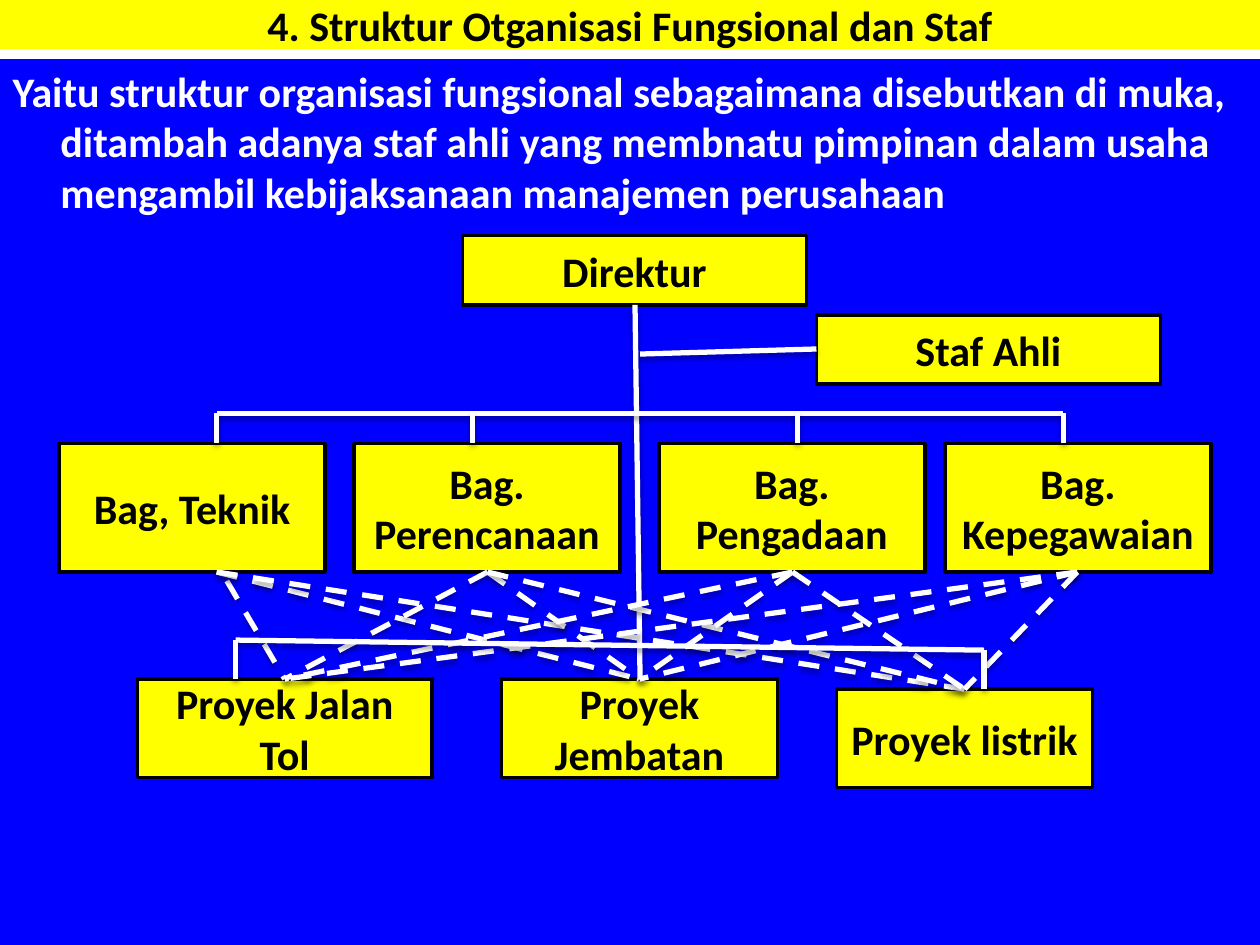
"""Build the slide on functional-and-staff organisation structure."""
import itertools

import pptx
import pptx.chart.data
import pptx.dml.color
import pptx.enum.dml
import pptx.enum.shapes
import pptx.enum.text
import pptx.oxml
import pptx.util

Inches, Pt = pptx.util.Inches, pptx.util.Pt
ALIGN = pptx.enum.text.PP_ALIGN
ANCHOR = pptx.enum.text.MSO_ANCHOR
COLOURS = {"yellow": "FFFF00", "blue": "0000FF", "black": "000000", "white": "FFFFFF"}
FONT = {"name": "Calibri", "size": Pt(24), "bold": True}

HEADING = "4. Struktur Otganisasi Fungsional dan Staf"
DEFINITION = (
    "Yaitu struktur organisasi fungsional sebagaimana disebutkan di muka, ditambah adanya "
    "staf ahli yang membnatu pimpinan dalam usaha mengambil kebijaksanaan manajemen perusahaan"
)
LEADERS = [("Direktur", 3.67, 1.87), ("Staf Ahli", 6.48, 2.5)]
LEADER_SIZE = (2.73, 0.55)
# name, left, x of the drop from the bar, x where the dashed lines leave
DEPARTMENTS = [
    ("Bag, Teknik", 0.47, 1.72, 1.72),
    ("Bag. Perencanaan", 2.81, 3.75, 3.87),
    ("Bag. Pengadaan", 5.23, 6.33, 6.29),
    ("Bag. Kepegawaian", 7.5, 8.44, 8.55),
]
DEPARTMENT_TOP, DEPARTMENT_SIZE = 3.52, (2.11, 1.02)
PROJECTS = [
    ("Proyek Jalan Tol", 1.09, 5.39, 2.34),
    ("Proyek Jembatan", 3.98, 5.39, 2.19),
    ("Proyek listrik", 6.64, 5.47, 2.03),
]
PROJECT_HEIGHT = 0.78
BAR_Y = 3.28
SHORTENED = {("Bag, Teknik", "Proyek Jalan Tol"): (1.8, 4.61)}
PROJECT_BAR = [(1.87, 5.08), (7.81, 5.16)]

SHADOW = (
    '<a:effectLst xmlns:a="http://schemas.openxmlformats.org/drawingml/2006/main">'
    '<a:outerShdw blurRad="39370" dist="22860" dir="5400000" rotWithShape="0">'
    '<a:srgbClr val="000000"><a:alpha val="35000"/></a:srgbClr>'
    "</a:outerShdw></a:effectLst>"
)


def rgb(colour):
    return pptx.dml.color.RGBColor.from_string(COLOURS[colour])


def paint(shape, wording, fill, ink, align, anchor):
    shape.fill.solid()
    shape.fill.fore_color.rgb = rgb(fill)
    frame = shape.text_frame
    frame.text = wording
    layout = {"word_wrap": True, "auto_size": pptx.enum.text.MSO_AUTO_SIZE.NONE,
              "vertical_anchor": anchor}
    for attribute, value in layout.items():
        setattr(frame, attribute, value)
    paragraph = frame.paragraphs[0]
    paragraph.alignment = align
    font = paragraph.runs[0].font
    for attribute, value in FONT.items():
        setattr(font, attribute, value)
    font.color.rgb = rgb(ink)
    return paragraph


def place(shape, left, top, width, height):
    sides = {"left": left, "top": top, "width": width, "height": height}
    for side, length in sides.items():
        setattr(shape, side, Inches(length))


def add_unit(slide, name, left, top, width, height):
    unit = slide.shapes.add_shape(
        pptx.enum.shapes.MSO_SHAPE.RECTANGLE, *map(Inches, (left, top, width, height)))
    unit.shadow.inherit = False
    unit.line.color.rgb = rgb("black")
    unit.line.width = Pt(2)
    paint(unit, name, "yellow", "black", ALIGN.CENTER, ANCHOR.MIDDLE)


def add_link(slide, start, end, dashed=False):
    link = slide.shapes.add_connector(
        pptx.enum.shapes.MSO_CONNECTOR.STRAIGHT, *map(Inches, (*start, *end)))
    link.line.color.rgb = rgb("white")
    link.line.width = Pt(3)
    if dashed:
        link.line.dash_style = pptx.enum.dml.MSO_LINE.DASH
    link._element.spPr.append(pptx.oxml.parse_xml(SHADOW))


def main():
    deck = pptx.Presentation()
    deck.slide_width, deck.slide_height = Inches(10), Inches(7.5)
    slide = deck.slides.add_slide(deck.slide_layouts[1])
    heading, definition = slide.placeholders
    place(heading, 0, 0, 10, 0.39)
    paint(heading, HEADING, "yellow", "black", ALIGN.CENTER, ANCHOR.MIDDLE)
    place(definition, 0, 0.47, 10, 7.03)
    paragraph = paint(definition, DEFINITION, "blue", "white", ALIGN.LEFT, ANCHOR.TOP)
    properties = paragraph._p.get_or_add_pPr()
    properties.set("marL", str(Inches(0.38)))
    properties.set("indent", str(-Inches(0.38)))
    properties.append(pptx.oxml.parse_xml(
        '<a:buNone xmlns:a="http://schemas.openxmlformats.org/drawingml/2006/main"/>'))

    for name, left, top in LEADERS:
        add_unit(slide, name, left, top, *LEADER_SIZE)
    for name, left, _, _ in DEPARTMENTS:
        add_unit(slide, name, left, DEPARTMENT_TOP, *DEPARTMENT_SIZE)
    for name, left, top, width in PROJECTS:
        add_unit(slide, name, left, top, width, PROJECT_HEIGHT)

    add_link(slide, (5.04, 2.42), (5.08, 5.39))
    add_link(slide, (5.08, 2.81), (6.48, 2.77))
    drops = [drop for _, _, drop, _ in DEPARTMENTS]
    add_link(slide, (drops[-1], BAR_Y), (drops[0], BAR_Y))
    for drop in drops:
        add_link(slide, (drop, BAR_Y), (drop, DEPARTMENT_TOP))

    department_bottom = DEPARTMENT_TOP + DEPARTMENT_SIZE[1]
    for department, project in itertools.product(DEPARTMENTS, PROJECTS):
        name, left, top, width = project
        start = SHORTENED.get((department[0], name), (department[3], department_bottom))
        add_link(slide, start, (left + width / 2, top), dashed=True)

    add_link(slide, *PROJECT_BAR)
    for (x, y), project in zip(PROJECT_BAR, (PROJECTS[0], PROJECTS[-1])):
        add_link(slide, (x, y), (x, project[2]))
    deck.save("out.pptx")


if __name__ == "__main__":
    main()
